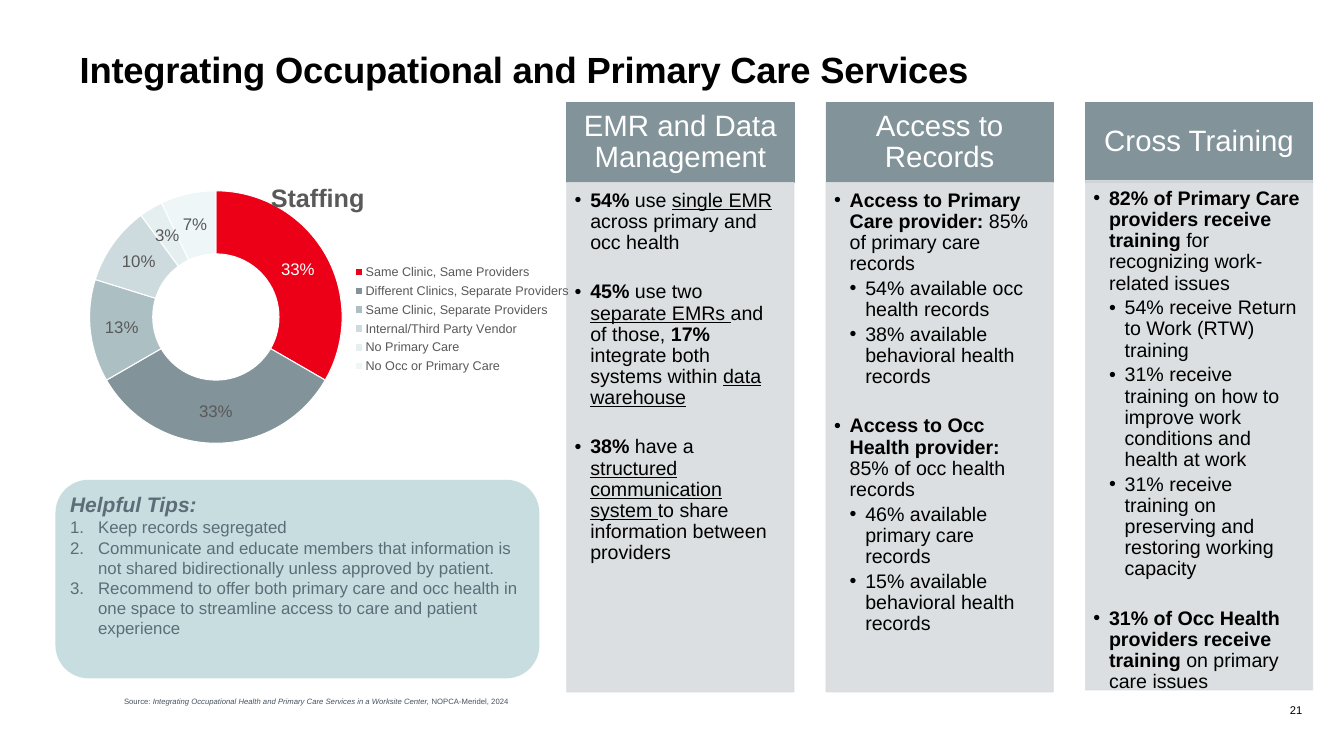
"""Build the slide on integrating occupational and primary care services."""
from lxml.etree import SubElement
from pptx import Presentation
from pptx.chart.data import CategoryChartData
from pptx.dml.color import RGBColor
from pptx.enum.chart import XL_CHART_TYPE, XL_LEGEND_POSITION
from pptx.enum.shapes import MSO_SHAPE
from pptx.enum.text import MSO_ANCHOR, PP_ALIGN
from pptx.oxml import parse_xml
from pptx.oxml.ns import nsdecls, qn
from pptx.util import Pt

BLACK, WHITE = RGBColor(0, 0, 0), RGBColor(255, 255, 255)
SLATE, PANEL = RGBColor(0x82, 0x93, 0x9A), RGBColor(0xD8, 0xDC, 0xDE)
TIP_FILL, TIP_TEXT = RGBColor(0xC7, 0xDD, 0xDF), RGBColor(0x5D, 0x6D, 0x78)
SOURCE_TEXT, CHART_TEXT = RGBColor(0x46, 0x53, 0x5E), RGBColor(0x59, 0x59, 0x59)

TITLE = "Integrating Occupational and Primary Care Services"
PAGE = "21"
SOURCE = [
    ("Source: ", ""),
    ("Integrating Occupational Health and Primary Care Services in a Worksite Center, ", "i"),
    ("NOPCA-Meridel, 2024", ""),
]
TIPS_HEADING = "Helpful Tips:"
TIPS = [
    "Keep records segregated",
    "Communicate and educate members that information is not shared bidirectionally "
    "unless approved by patient.",
    "Recommend to offer both primary care and occ health in one space to streamline "
    "access to care and patient experience",
]
CHART_TITLE = "Staffing"
STAFFING = [
    ("Same Clinic, Same Providers", 0.33, RGBColor(0xEB, 0x00, 0x17)),
    ("Different Clinics, Separate Providers", 0.33, SLATE),
    ("Same Clinic, Separate Providers", 0.13, RGBColor(0xAC, 0xC0, 0xC3)),
    ("Internal/Third Party Vendor", 0.10, RGBColor(0xCD, 0xDB, 0xDE)),
    ("No Primary Care", 0.03, RGBColor(0xE5, 0xEF, 0xF0)),
    ("No Occ or Primary Care", 0.07, RGBColor(0xEE, 0xF6, 0xF7)),
]
COLUMNS = [
    ("EMR and Data Management", 260.6, [
        ([("54%", "b"), (" use ", ""), ("single EMR ", "u"),
          ("across primary and occ health", "")], []),
        ([("45%", "b"), (" use two ", ""), ("separate EMRs ", "u"), ("and of those, ", ""),
          ("17%", "b"), (" integrate both systems within ", ""), ("data warehouse", "u")], []),
        ([("38% ", "b"), ("have a ", ""), ("structured communication system ", "u"),
          ("to share information between providers", "")], []),
    ]),
    ("Access to Records", 260.6, [
        ([("Access to Primary Care provider: ", "b"), ("85% of primary care records", "")],
         ["54% available occ health records", "38% available behavioral health records"]),
        ([("Access to Occ Health provider: ", "b"), ("85% of occ health records", "")],
         ["46% available primary care records", "15% available behavioral health records"]),
    ]),
    ("Cross Training", 257.8, [
        ([("82% of Primary Care providers receive training ", "b"),
          ("for recognizing work-related issues", "")],
         ["54% receive Return to Work (RTW) training",
          "31% receive training on how to improve work conditions and health at work",
          "31% receive training on preserving and restoring working capacity"]),
        ([("31% of Occ Health providers receive training ", "b"),
          ("on primary care issues", "")], []),
    ]),
]
COLUMN_LEFT, COLUMN_TOP, COLUMN_PITCH = 809.3, 146.2, 370.4
COLUMN_WIDTH, HEADER_HEIGHT, BODY_HEIGHT = 324.7, 114.5, 727.9
HANG, TIP_HANG, TOPIC_GAP = 22.3, 40, 35


def assign(target, **values):
    for key, value in values.items():
        setattr(target, key, value)


def set_font(font, size, color, **values):
    assign(font, name="Arial", size=Pt(size), **values)
    font.color.rgb = color


def write(paragraph, runs, size, color, **layout):
    assign(paragraph, **layout)
    for text, style in runs:
        run = paragraph.add_run()
        run.text = text
        set_font(run.font, size, color, bold="b" in style, italic="i" in style,
                 underline="u" in style)


def set_frame(frame, insets, anchor=MSO_ANCHOR.TOP):
    left, top, right, bottom = map(Pt, insets)
    assign(frame, word_wrap=True, vertical_anchor=anchor, margin_left=left,
           margin_top=top, margin_right=right, margin_bottom=bottom)
    return frame


def add_marker(paragraph, left, hang, tag, **attributes):
    properties = paragraph._p.get_or_add_pPr()
    properties.set("marL", str(Pt(left)))
    properties.set("indent", str(-Pt(hang)))
    SubElement(properties, qn("a:buFont")).set("typeface", "Arial")
    SubElement(properties, qn(tag), attributes)


def add_panel(slide, kind, box, fill, line=None, alpha=None):
    panel = slide.shapes.add_shape(kind, *map(Pt, box))
    panel.shadow.inherit = False
    panel.fill.solid()
    panel.fill.fore_color.rgb = fill
    if line is None:
        panel.line.fill.background()
    else:
        panel.line.color.rgb = line
        panel.line.width = Pt(1)
    if alpha:
        for color in panel._element.spPr.iter(qn("a:srgbClr")):
            SubElement(color, qn("a:alpha")).set("val", str(alpha * 1000))
    return panel


def add_column(slide, index, heading, body_top, topics):
    left = COLUMN_LEFT + index * COLUMN_PITCH
    header = add_panel(slide, MSO_SHAPE.RECTANGLE,
                       (left, COLUMN_TOP, COLUMN_WIDTH, HEADER_HEIGHT), SLATE, SLATE)
    frame = set_frame(header.text_frame, (23.5, 13.5, 23.5, 13.5), MSO_ANCHOR.MIDDLE)
    write(frame.paragraphs[0], [(heading, "")], 42, WHITE,
          alignment=PP_ALIGN.CENTER, line_spacing=0.9)
    body = add_panel(slide, MSO_SHAPE.RECTANGLE,
                     (left, body_top, COLUMN_WIDTH, BODY_HEIGHT), PANEL, PANEL, 90)
    frame = set_frame(body.text_frame, (11.5, 11.5, 16, 17))
    for number, (lead, details) in enumerate(topics):
        entries = [(1, lead)] + [(2, [(detail, "")]) for detail in details]
        for level, runs in entries:
            first = number == 0 and level == 1
            paragraph = frame.paragraphs[0] if first else frame.add_paragraph()
            gap = TOPIC_GAP if number and level == 1 else 0
            write(paragraph, runs, 28, BLACK, alignment=PP_ALIGN.LEFT, level=level,
                  line_spacing=0.9, space_before=Pt(gap), space_after=Pt(5))
            add_marker(paragraph, level * HANG, HANG, "a:buChar", char="•")


def place(part, index, x, y, w=None, h=None, inner=False):
    for old in part.findall(qn("c:layout")):
        part.remove(old)
    values = {"layoutTarget": "inner" if inner else None, "xMode": "edge", "yMode": "edge",
              "x": x, "y": y, "w": w, "h": h}
    layout = parse_xml(f"<c:layout {nsdecls('c')}><c:manualLayout/></c:layout>")
    for key, value in values.items():
        if value is not None:
            SubElement(layout[0], qn(f"c:{key}")).set("val", str(value))
    part.insert(index, layout)


def add_staffing(slide):
    names, shares, colors = zip(*STAFFING)
    data = CategoryChartData(number_format="0%")
    data.categories = names
    data.add_series("Series 1", shares)
    box = map(Pt, (44.6, 229, 799.2, 622))
    chart = slide.shapes.add_chart(XL_CHART_TYPE.DOUGHNUT, *box, data).chart
    set_font(chart.font, 10, BLACK)
    assign(chart, has_title=True, has_legend=True)
    heading = chart.chart_title.text_frame.paragraphs[0]
    write(heading, [(CHART_TITLE, "b")], 36, CHART_TEXT)
    assign(chart.legend, position=XL_LEGEND_POSITION.RIGHT, include_in_layout=False)
    set_font(chart.legend.font, 18, CHART_TEXT)
    plot = chart.plots[0]
    assign(plot, vary_by_categories=True, has_data_labels=True)
    for labels in (plot.data_labels, plot.series[0].data_labels):
        assign(labels, show_value=True, show_percentage=False, number_format="0%",
               number_format_is_linked=False)
        set_font(labels.font, 24, CHART_TEXT)
    for index, color in enumerate(colors):
        area = plot.series[0].points[index].format
        area.fill.solid()
        area.fill.fore_color.rgb = color
        area.line.color.rgb = WHITE
        area.line.width = Pt(1.5)
    set_font(plot.series[0].points[0].data_label.font, 24, WHITE)
    place(chart.chart_title._element, 1, 0.42, 0.04)
    place(chart.legend._element, 1, 0.56, 0.23, 0.42, 0.27)
    place(chart._chartSpace.chart.plotArea, 0, 0.05, 0.07, 0.56, 0.58, inner=True)


def add_text(slide, box, insets, runs, size, color, anchor=MSO_ANCHOR.TOP, **layout):
    frame = slide.shapes.add_textbox(*map(Pt, box)).text_frame
    write(set_frame(frame, insets, anchor).paragraphs[0], runs, size, color, **layout)


def add_tips(slide):
    panel = add_panel(slide, MSO_SHAPE.ROUNDED_RECTANGLE, (79.2, 685.4, 691.2, 283.7), TIP_FILL)
    frame = set_frame(panel.text_frame, (7.2, 3.6, 7.2, 3.6))
    write(frame.paragraphs[0], [(TIPS_HEADING, "bi")], 30, TIP_TEXT, alignment=PP_ALIGN.LEFT)
    for tip in TIPS:
        paragraph = frame.add_paragraph()
        write(paragraph, [(tip, "")], 24, TIP_TEXT, alignment=PP_ALIGN.LEFT)
        add_marker(paragraph, TIP_HANG, TIP_HANG, "a:buAutoNum", type="arabicPeriod")


def main():
    deck = Presentation()
    assign(deck, slide_width=Pt(1919.5), slide_height=Pt(1080))
    slide = deck.slides.add_slide(deck.slide_layouts[5])
    title = slide.shapes.title
    assign(title, left=Pt(113.8), top=Pt(66.2), width=Pt(1682.6), height=Pt(63.4))
    frame = set_frame(title.text_frame, (0, 0, 0, 0), MSO_ANCHOR.MIDDLE)
    write(frame.paragraphs[0], [(TITLE, "b")], 52, BLACK, alignment=PP_ALIGN.LEFT)
    frame.paragraphs[0].runs[0]._r.get_or_add_rPr().set("spc", "-30")
    for index, column in enumerate(COLUMNS):
        add_column(slide, index, *column)
    add_staffing(slide)
    add_text(slide, (177.1, 992.2, 1031, 20.9), (0, 3.6, 0, 3.6), SOURCE, 11, SOURCE_TEXT)
    add_tips(slide)
    add_text(slide, (1796.4, 985.7, 63.4, 57.6), (0, 0, 0, 0), [(PAGE, "")], 16, BLACK,
             MSO_ANCHOR.MIDDLE, alignment=PP_ALIGN.RIGHT)
    deck.save("out.pptx")


if __name__ == "__main__":
    main()
